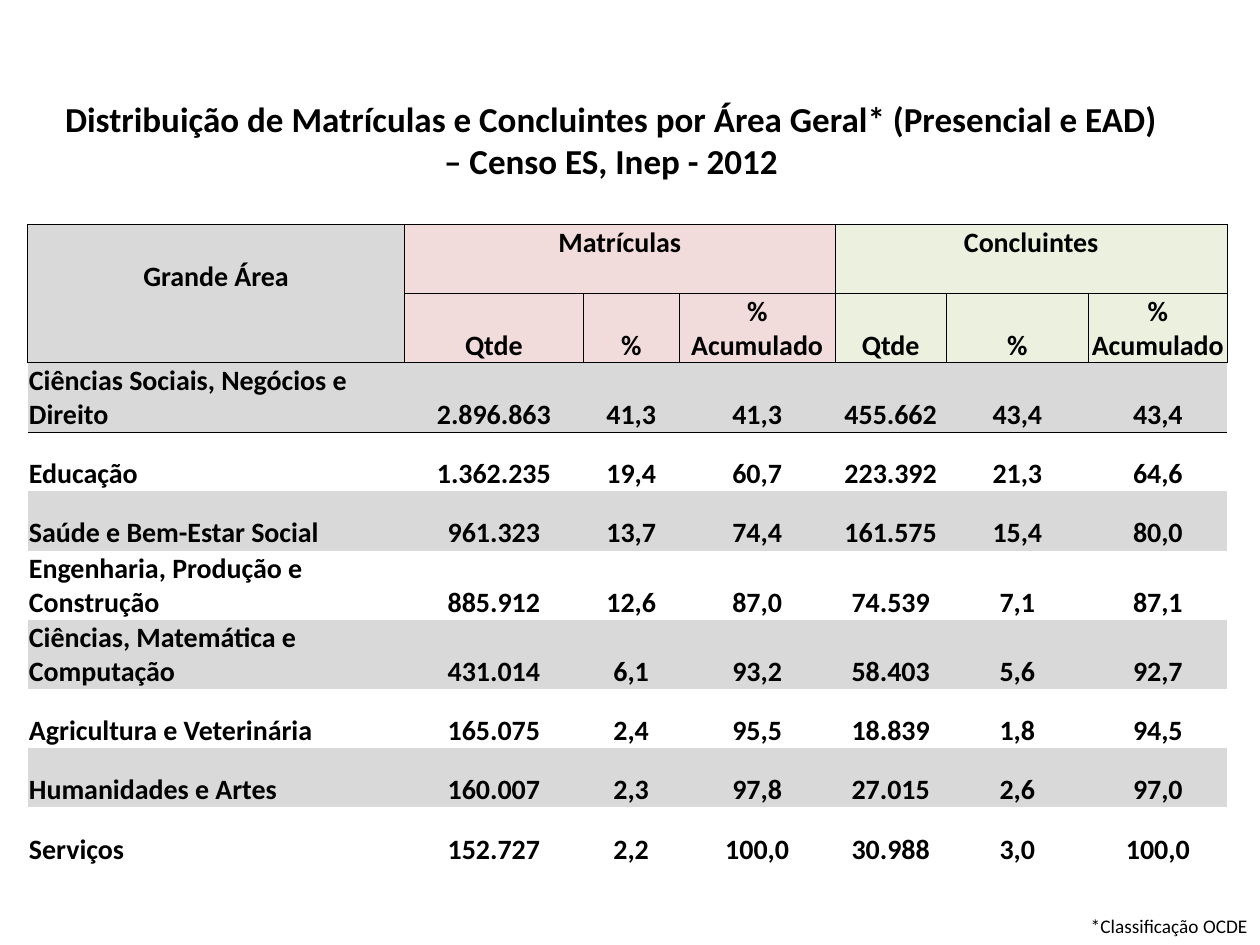
"""Build the slide on enrolments and graduates by general area."""
from lxml.etree import SubElement
from pptx import Presentation
from pptx.dml.color import RGBColor
from pptx.enum.text import MSO_ANCHOR, PP_ALIGN
from pptx.oxml.ns import qn
from pptx.util import Inches, Pt

TITLE = "Distribuição de Matrículas e Concluintes por Área Geral* (Presencial e EAD) – Censo ES, Inep - 2012"
FOOTNOTE = "*Classificação OCDE"
AREA_HEADING = "Grande Área"
GROUPS = ["Matrículas", "Concluintes"]
MEASURES = ["Qtde", "%", "% Acumulado"]
AREAS = [
    ("Ciências Sociais, Negócios e Direito", "2.896.863", "41,3", "41,3", "455.662", "43,4", "43,4"),
    ("Educação", "1.362.235", "19,4", "60,7", "223.392", "21,3", "64,6"),
    ("Saúde e Bem-Estar Social", "961.323", "13,7", "74,4", "161.575", "15,4", "80,0"),
    ("Engenharia, Produção e Construção", "885.912", "12,6", "87,0", "74.539", "7,1", "87,1"),
    ("Ciências, Matemática e Computação", "431.014", "6,1", "93,2", "58.403", "5,6", "92,7"),
    ("Agricultura e Veterinária", "165.075", "2,4", "95,5", "18.839", "1,8", "94,5"),
    ("Humanidades e Artes", "160.007", "2,3", "97,8", "27.015", "2,6", "97,0"),
    ("Serviços", "152.727", "2,2", "100,0", "30.988", "3,0", "100,0"),
]

THEME = {
    "font": "Calibri", "ink": "000000", "band": "D9D9D9", "plain": "FFFFFF",
    "groups": ["F2DCDB", "EBF1DE"],
    "title": 20, "cell": 16, "footnote": 11, "rule": 0.5,
    "no_style": "{2D5ABB26-0587-4C30-8999-92F81FD0307C}",
}
SLIDE = (10, 7.5)
TITLE_BOX = (0.35, 0.52, 9, 1.17)
TABLE_BOX = (0.22, 1.78, 9.52, 5.12)
FOOTNOTE_BOX = (7.32, 7.21, 2.68, 0.29)
COLUMNS = [2.99, 1.42, 0.76, 1.24, 0.88, 1.13, 1.1]
ONE_LINE, TWO_LINES = 0.47, 0.55
WRAP_LENGTH = 30
CELL_FORMAT = {
    "margin_left": Inches(0.01), "margin_right": Inches(0.01),
    "margin_top": Inches(0.01), "margin_bottom": 0,
}


def apply(target, values):
    for name, value in values.items():
        setattr(target, name, value)


def write(frame, wording, size, align, bold=True):
    paragraph = frame.paragraphs[0]
    paragraph.alignment = align
    run = paragraph.add_run()
    run.text = wording
    apply(run.font, {"name": THEME["font"], "size": Pt(size), "bold": bold})
    run.font.color.rgb = RGBColor.from_string(THEME["ink"])


def add_caption(slide, box, wording, size, align, anchor, bold):
    frame = slide.shapes.add_textbox(*map(Inches, box)).text_frame
    apply(frame, {"word_wrap": True, "vertical_anchor": anchor})
    write(frame, wording, size, align, bold)


def fill_cell(cell, wording, colour, sides="", align=PP_ALIGN.CENTER, anchor=MSO_ANCHOR.BOTTOM):
    apply(cell, {**CELL_FORMAT, "vertical_anchor": anchor})
    for side in sides:
        rule = SubElement(cell._tc.get_or_add_tcPr(), qn(f"a:ln{side}"), w=str(Pt(THEME["rule"])))
        SubElement(SubElement(rule, qn("a:solidFill")), qn("a:srgbClr"), val=THEME["ink"])
    cell.fill.solid()
    cell.fill.fore_color.rgb = RGBColor.from_string(colour)
    if wording:
        write(cell.text_frame, wording, THEME["cell"], align)


def fill_headings(table):
    fill_cell(table.cell(0, 0), AREA_HEADING, THEME["band"], "LRT")
    fill_cell(table.cell(1, 0), "", THEME["band"], "LRB")
    for group, (heading, colour) in enumerate(zip(GROUPS, THEME["groups"])):
        first = 1 + group * len(MEASURES)
        for column, measure in enumerate(MEASURES, first):
            wording = heading if column == first else ""
            sides = "LRTB" if column == first else "RTB"
            fill_cell(table.cell(0, column), wording, colour, sides, anchor=MSO_ANCHOR.TOP)
            fill_cell(table.cell(1, column), measure, colour, "LRTB")
        table.cell(0, first).merge(table.cell(0, first + len(MEASURES) - 1))


def fill_areas(table):
    for index, area in enumerate(AREAS):
        colour = THEME["plain"] if index % 2 else THEME["band"]
        for column, wording in enumerate(area):
            align = PP_ALIGN.CENTER if column else PP_ALIGN.LEFT
            fill_cell(table.cell(index + 2, column), wording, colour, "" if index else "T", align)


def add_areas_table(slide):
    table = slide.shapes.add_table(len(AREAS) + 2, len(COLUMNS), *map(Inches, TABLE_BOX)).table
    apply(table, {"first_row": False, "horz_banding": False})
    table._tbl.tblPr.find(qn("a:tableStyleId")).text = THEME["no_style"]
    for column, width in zip(table.columns, COLUMNS):
        column.width = Inches(width)
    heights = [TWO_LINES] * 2 + [TWO_LINES if len(area[0]) > WRAP_LENGTH else ONE_LINE for area in AREAS]
    for row, height in zip(table.rows, heights):
        row.height = Inches(height)
    fill_headings(table)
    fill_areas(table)


def main():
    deck = Presentation()
    apply(deck, dict(zip(("slide_width", "slide_height"), map(Inches, SLIDE))))
    slide = deck.slides.add_slide(deck.slide_layouts[6])
    add_caption(slide, TITLE_BOX, TITLE, THEME["title"], PP_ALIGN.CENTER, MSO_ANCHOR.MIDDLE, True)
    add_areas_table(slide)
    add_caption(slide, FOOTNOTE_BOX, FOOTNOTE, THEME["footnote"], PP_ALIGN.RIGHT, MSO_ANCHOR.TOP, False)
    deck.save("out.pptx")


if __name__ == "__main__":
    main()
